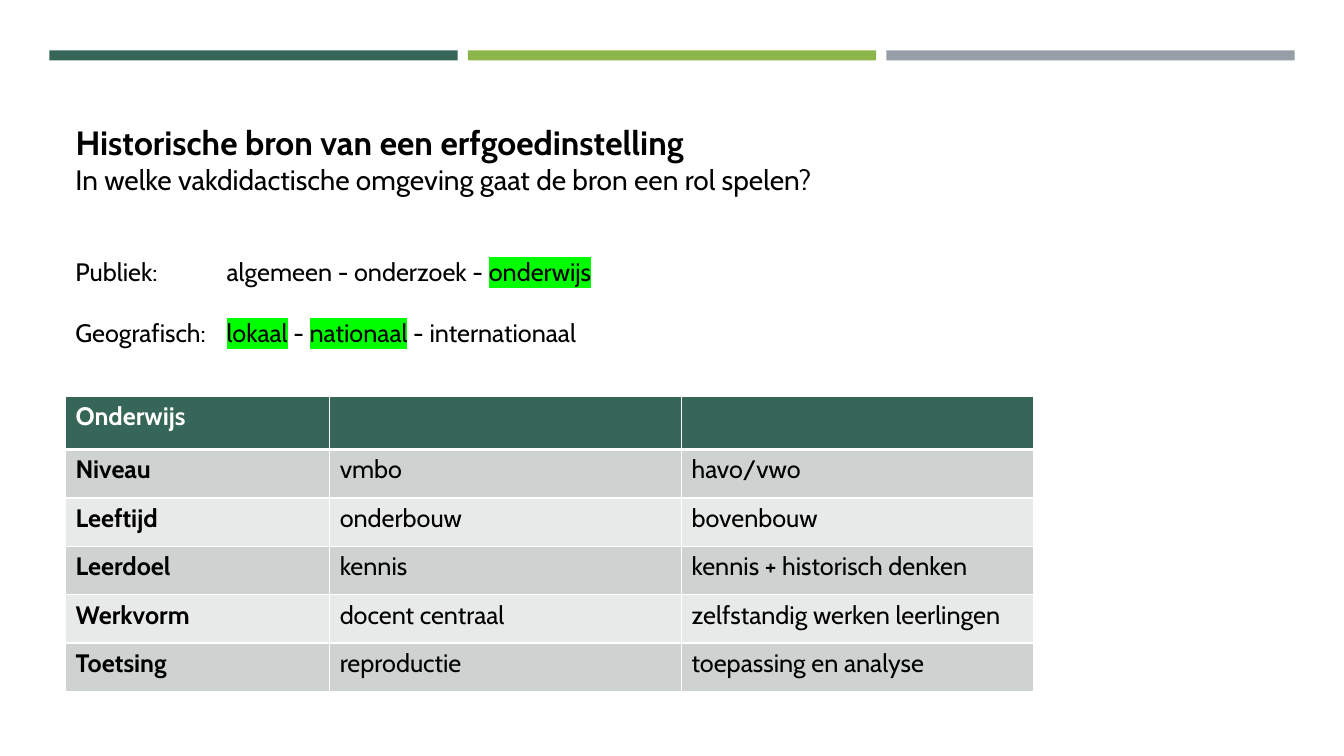
"""Build the slide about a historical source and its teaching context."""
from lxml import etree
from pptx import Presentation
from pptx.dml.color import RGBColor
from pptx.enum import shapes, text
from pptx.oxml import ns
from pptx.util import Inches, Pt

GREEN, WHITE, BLACK, MARKER = "366658", "FFFFFF", "000000", "00FF00"


def add_color(parent, tag, color):
    element = etree.SubElement(parent, ns.qn(tag))
    etree.SubElement(element, ns.qn("a:srgbClr"), val=color)
    return element


def add_text(paragraph, content, size=18, color=BLACK, bold=False, highlight=None):
    run = paragraph.add_run()
    run.text = content
    run.font.size = Pt(size)
    run.font.bold = bold
    run.font.color.rgb = RGBColor.from_string(color)
    run.font.name = "Cabin"
    if highlight:
        properties = run.font._element
        marker = add_color(properties, "a:highlight", highlight)
        properties.find(ns.qn("a:solidFill")).addnext(marker)


presentation = Presentation()
presentation.slide_width = Inches(13.33)
presentation.slide_height = Inches(7.5)
slide = presentation.slides.add_slide(presentation.slide_layouts[5])

for index, color in enumerate([GREEN, "8CB64A", "969FA7"]):
    bar = slide.shapes.add_shape(
        shapes.MSO_SHAPE.RECTANGLE,
        Inches(0.49 + 4.15 * index), Inches(0.5), Inches(4.05), Inches(0.1))
    bar.shadow.inherit = False
    bar.fill.solid()
    bar.fill.fore_color.rgb = RGBColor.from_string(color)
    bar.line.fill.background()

title = slide.shapes.title
title.left, title.top = Inches(0.65), Inches(1.16)
title.width, title.height = Inches(12.36), Inches(0.5)
title.text_frame.vertical_anchor = text.MSO_ANCHOR.TOP
title.text_frame.auto_size = text.MSO_AUTO_SIZE.NONE
heading = title.text_frame.paragraphs[0]
heading.alignment = text.PP_ALIGN.LEFT
add_text(heading, "Historische bron van een erfgoedinstelling", size=24, bold=True)

context = slide.shapes.add_textbox(Inches(0.65), Inches(1.56), Inches(12.36), Inches(2))
context.text_frame.word_wrap = True
question = context.text_frame.paragraphs[0]
add_text(question, "In welke vakdidactische omgeving gaat de bron een rol spelen?", size=20)

choices = [
    ("Publiek:", ["algemeen", "onderzoek", "onderwijs"], 43),
    ("Geografisch:", ["lokaal", "nationaal", "internationaal"], 22),
]
chosen = {"onderwijs", "lokaal", "nationaal"}
for label, options, gap in choices:
    paragraph = context.text_frame.add_paragraph()
    paragraph.space_before = Pt(gap)
    tabs = etree.SubElement(paragraph._p.get_or_add_pPr(), ns.qn("a:tabLst"))
    etree.SubElement(tabs, ns.qn("a:tab"), pos=str(Inches(1.5)), algn="l")
    add_text(paragraph, label + "\t")
    for position, option in enumerate(options):
        if position:
            add_text(paragraph, " - ")
        add_text(paragraph, option, highlight=MARKER if option in chosen else None)

rows = [
    ("Onderwijs", "", ""),
    ("Niveau", "vmbo", "havo/vwo"),
    ("Leeftijd", "onderbouw", "bovenbouw"),
    ("Leerdoel", "kennis", "kennis + historisch denken"),
    ("Werkvorm", "docent centraal", "zelfstandig werken leerlingen"),
    ("Toetsing", "reproductie", "toepassing en analyse"),
]
table = slide.shapes.add_table(
    len(rows), 3, Inches(0.65), Inches(3.93), Inches(9.6), Inches(2.93)).table
for column, width in zip(table.columns, [2.62, 3.49, 3.49]):
    column.width = Inches(width)
for row_index, values in enumerate(rows):
    header = row_index == 0
    table.rows[row_index].height = Inches(0.53 if header else 0.48)
    fill = GREEN if header else ["E8EAEA", "CED3D1"][row_index % 2]
    for column_index, value in enumerate(values):
        cell = table.cell(row_index, column_index)
        properties = cell._tc.get_or_add_tcPr()
        for side in "LRTB":
            thick = (row_index, side) in [(0, "B"), (1, "T")]
            border = etree.SubElement(
                properties, ns.qn("a:ln" + side), w=str(Pt(3 if thick else 1)))
            add_color(border, "a:solidFill", WHITE)
        cell.fill.solid()
        cell.fill.fore_color.rgb = RGBColor.from_string(fill)
        if value:
            add_text(cell.text_frame.paragraphs[0], value,
                     color=WHITE if header else BLACK, bold=column_index == 0)

presentation.save("out.pptx")
